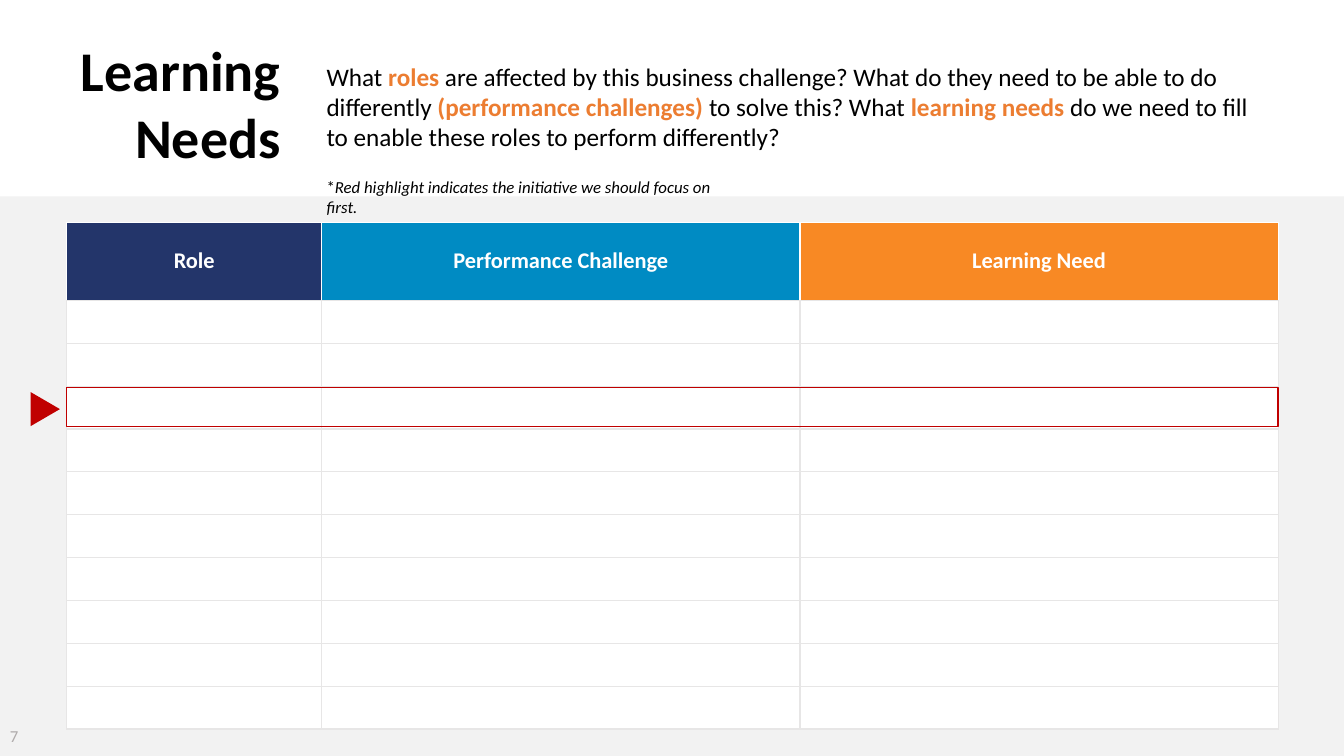
import pptx
import pptx.dml.color
import pptx.enum.shapes
import pptx.enum.text
import pptx.oxml
import pptx.oxml.ns
import pptx.util

Cm = pptx.util.Cm
ALIGN = pptx.enum.text.PP_ALIGN
ANCHOR = pptx.enum.text.MSO_ANCHOR
SHAPES = pptx.enum.shapes.MSO_SHAPE

COLORS = {
    "white": "FFFFFF", "black": "000000", "band": "F2F2F2", "grid": "E7E6E6",
    "number": "AFABAB", "accent": "EC7D31", "focus": "C00000",
    "role": "23356A", "challenge": "008BC3", "need": "F88924",
}
COLUMNS = [  # heading, fill, width in cm, hanging indent in cm
    ("Role", "role", 6.43, 0),
    ("Performance Challenge", "challenge", 12.05, 0.97),
    ("Learning Need", "need", 12.05, 0.97),
]
HEADER_HEIGHT, ROW_HEIGHT, BODY_ROWS = 1.97, 1.08, 10
FOCUS_ROW = 2  # counted from the first body row

PLAIN = {"size": pptx.util.Pt(18)}
KEYWORD = {"size": pptx.util.Pt(18), "bold": True, "color": "accent"}
TITLE = {"size": pptx.util.Pt(40), "bold": True}
HEADING = {"size": pptx.util.Pt(16), "bold": True, "color": "white"}
NOTE = {"size": pptx.util.Pt(12)}
NUMBER = {"size": pptx.util.Pt(12), "color": "number"}


def rgb(name):
    return pptx.dml.color.RGBColor.from_string(COLORS[name])


def add_run(paragraph, text, style):
    run = paragraph.add_run()
    run.text = text
    settings = {"name": "Calibri", "color": "black", **style}
    run.font.color.rgb = rgb(settings.pop("color"))
    for attribute, value in settings.items():
        setattr(run.font, attribute, value)


def add_text(slide, box, paragraphs, align=ALIGN.LEFT, anchor=ANCHOR.TOP):
    """Place paragraphs, each a list of (text, style) runs, in a box given in cm."""
    frame = slide.shapes.add_textbox(*map(Cm, box)).text_frame
    for attribute, value in {"word_wrap": True, "vertical_anchor": anchor}.items():
        setattr(frame, attribute, value)
    for index, runs in enumerate(paragraphs):
        paragraph = frame.add_paragraph() if index else frame.paragraphs[0]
        paragraph.alignment = align
        for text, style in runs:
            add_run(paragraph, text, style)


def add_block(slide, kind, box, fill=None, line=None):
    block = slide.shapes.add_shape(kind, *map(Cm, box))
    block.shadow.inherit = False
    if fill:
        block.fill.solid()
        block.fill.fore_color.rgb = rgb(fill)
    else:
        block.fill.background()
    if line:
        block.line.color.rgb = rgb(line)
        block.line.width = pptx.util.Pt(1)
    else:
        block.line.fill.background()
    return block


def paint_cell(cell, fill, borders):
    """Fill a cell and draw its left, right, top and bottom borders."""
    cell.fill.solid()
    cell.fill.fore_color.rgb = rgb(fill)
    properties = cell._tc.get_or_add_tcPr()
    for index, (side, color) in enumerate(zip("LRTB", borders)):
        properties.insert(index, pptx.oxml.parse_xml(
            f'<a:ln{side} {pptx.oxml.ns.nsdecls("a")} w="12700"><a:solidFill>'
            f'<a:srgbClr val="{COLORS[color]}"/></a:solidFill></a:ln{side}>'))


def add_heading_area(slide, left, top):
    add_text(slide, (left, top, 5.64, 3.68),
             [[("Learning ", TITLE)], [("Needs", TITLE)]], ALIGN.RIGHT)
    question = [
        ("What ", PLAIN), ("roles", KEYWORD),
        (" are affected by this business challenge? "
         "What do they need to be able to do differently ", PLAIN),
        ("(performance challenges) ", KEYWORD),
        ("to solve this? What ", PLAIN), ("learning needs ", KEYWORD),
        ("do we need to fill to enable these roles to perform differently?", PLAIN),
    ]
    add_text(slide, (left + 6.3, top + 0.66, 24.2, 2.57), [question])


def add_needs_table(slide, left, top):
    width = sum(column[2] for column in COLUMNS)
    height = HEADER_HEIGHT + BODY_ROWS * ROW_HEIGHT
    needs = slide.shapes.add_table(
        BODY_ROWS + 1, len(COLUMNS), *map(Cm, (left, top, width, height))).table
    for row in needs.rows:
        row.height = Cm(ROW_HEIGHT)
    needs.rows[0].height = Cm(HEADER_HEIGHT)
    for index, (heading, fill, column_width, indent) in enumerate(COLUMNS):
        needs.columns[index].width = Cm(column_width)
        header = needs.cell(0, index)
        paint_cell(header, fill, ["white", "white", "white", "grid"])
        header.vertical_anchor = ANCHOR.MIDDLE
        paragraph = header.text_frame.paragraphs[0]
        paragraph.alignment = ALIGN.CENTER
        margins = paragraph._p.get_or_add_pPr()
        margins.set("marL", str(int(Cm(indent))))
        margins.set("indent", str(-int(Cm(indent))))
        add_run(paragraph, heading, HEADING)
        for row_index in range(1, BODY_ROWS + 1):
            paint_cell(needs.cell(row_index, index), "white", ["grid"] * 4)


def add_focus_marker(slide, left, top):
    """Outline the focus row of the table at (left, top) and point at it."""
    row_top = top + HEADER_HEIGHT + FOCUS_ROW * ROW_HEIGHT
    pointer = add_block(slide, SHAPES.ISOSCELES_TRIANGLE,
                        (left - 0.97, row_top + 0.21, 0.86, 0.74), fill="focus")
    pointer.rotation = 90
    width = sum(column[2] for column in COLUMNS)
    add_block(slide, SHAPES.RECTANGLE, (left, row_top + 0.03, width, 0.99), line="focus")


def add_learning_needs_slide(deck):
    slide = deck.slides.add_slide(deck.slide_layouts[6])
    left, table_top = 1.68, 5.6
    add_block(slide, SHAPES.RECTANGLE, (0, 4.95, 33.87, 14.1), fill="band")
    add_text(slide, (0, 18.03, 1.52, 1.02), [[("7", NUMBER)]], anchor=ANCHOR.MIDDLE)
    add_heading_area(slide, left, 0.76)
    add_needs_table(slide, left, table_top)
    add_focus_marker(slide, left, table_top)
    add_text(slide, (left + 6.3, 4.32, 11.05, 0.77), [[
        ("*", NOTE),
        ("Red highlight indicates the initiative we should focus on first.",
         {**NOTE, "italic": True})]])


def main():
    deck = pptx.Presentation()
    deck.slide_width, deck.slide_height = Cm(33.87), Cm(19.05)
    add_learning_needs_slide(deck)
    deck.save("out.pptx")


if __name__ == "__main__":
    main()
